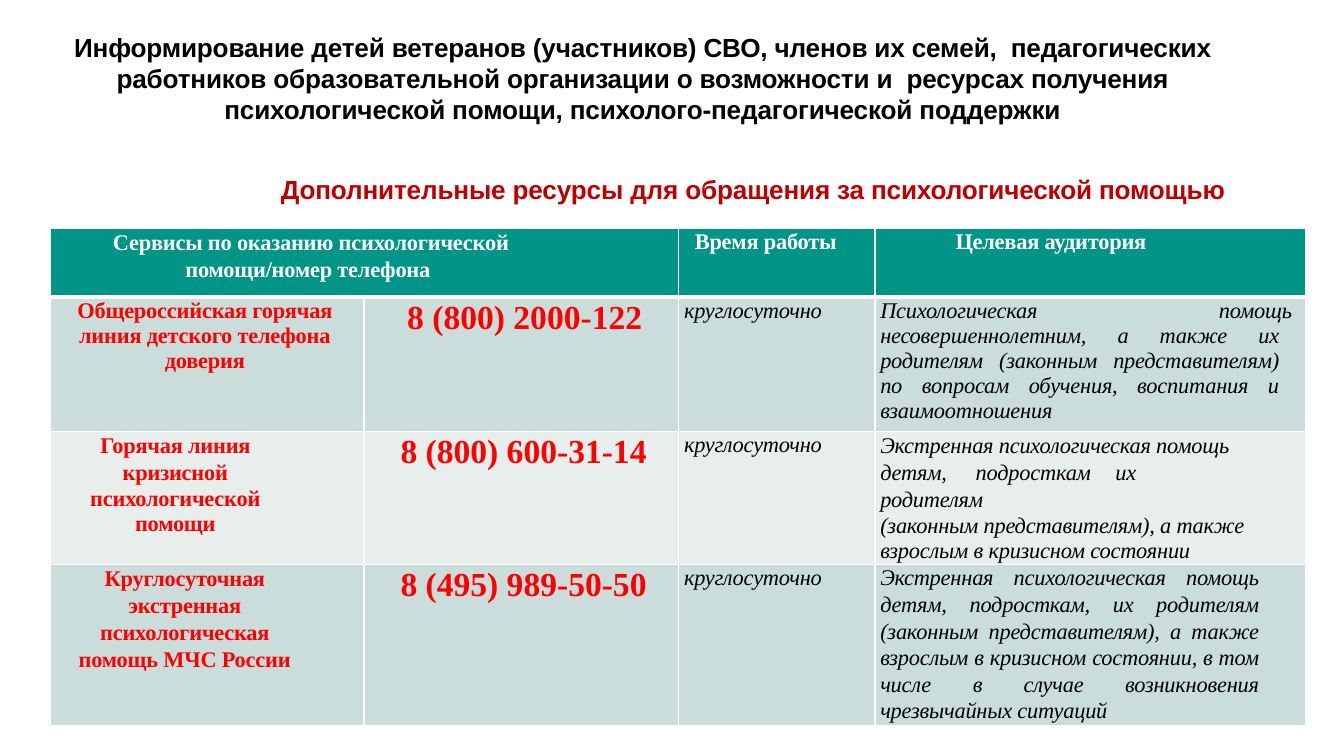
from dataclasses import dataclass

from lxml.etree import SubElement
from pptx import Presentation
from pptx.dml.color import RGBColor
from pptx.enum.text import MSO_ANCHOR, MSO_AUTO_SIZE, PP_ALIGN
from pptx.oxml.ns import qn
from pptx.util import Inches, Pt

COLORS = {
    "title": "000000", "subtitle": "C00000", "header": "009587",
    "header_text": "FFFFFF", "service": "FF0000", "detail": "000000",
    "band_dark": "CADDDA", "band_light": "E7EEEC", "border": "FFFFFF",
}
LEFT, CENTER, JUSTIFY = PP_ALIGN.LEFT, PP_ALIGN.CENTER, PP_ALIGN.JUSTIFY


@dataclass
class Line:
    """One paragraph: indents and tab stops in inches, leading in points."""
    text: str
    align: PP_ALIGN = LEFT
    left: float = 0
    right: float = 0
    first: float = 0
    leading: float = 14.1
    tabs: tuple = ()


HEADERS = {
    0: Line("Сервисы по оказанию психологической помощи/номер телефона",
            left=1.01, right=1, first=-0.54, leading=14.4),
    2: Line("Время работы", left=0.12),
    3: Line("Целевая аудитория", left=0.6),
}

# service name, phone, phone indent, audience
SERVICES = [
    ([Line("Общероссийская горячая", CENTER, right=0.03),
      Line("линия детского телефона", CENTER, right=0.03, leading=13.4),
      Line("доверия", CENTER, right=0.03, leading=13.4)],
     "8 (800) 2000-122", 0.32,
     [Line("Психологическая\tпомощь", JUSTIFY, 0.04, tabs=(2.52,)),
      Line("несовершеннолетним, а также их родителям (законным представителям) "
           "по вопросам обучения, воспитания и взаимоотношения",
           JUSTIFY, 0.04, 0.2, leading=13.4)]),
    ([Line("Горячая линия кризисной", CENTER, 0.37, 0.84, leading=14.4),
      Line("психологической", CENTER, right=0.47, leading=13.9),
      Line("помощи", CENTER, right=0.47, leading=13.4)],
     "8 (800) 600-31-14", 0.27,
     [Line("Экстренная психологическая помощь детям,\tподросткам\tих\tродителям",
           LEFT, 0.04, 0.45, leading=14.4, tabs=(0.71, 1.75, 2.07)),
      Line("(законным представителям), а также", left=0.04, leading=13.9),
      Line("взрослым в кризисном состоянии", left=0.04, leading=13.4)]),
    ([Line("Круглосуточная экстренная психологическая помощь МЧС России",
           CENTER, 0.2, 0.53, leading=14.4)],
     "8 (495) 989-50-50", 0.27,
     [Line("Экстренная психологическая помощь детям, подросткам, их родителям "
           "(законным представителям), а также взрослым в кризисном состоянии, "
           "в том числе в случае возникновения чрезвычайных ситуаций",
           JUSTIFY, 0.04, 0.35, leading=14.2)]),
]


def style_run(run, font, size, color, bold=False, italic=False):
    run.font.name = font
    run.font.size = Pt(size)
    run.font.bold = bold
    run.font.italic = italic
    run.font.color.rgb = RGBColor.from_string(COLORS[color])
    if size < 18:
        run._r.get_or_add_rPr().set("spc", "-10")


def write_heading(shape, box, text, color, align):
    shape.left, shape.top, shape.width, shape.height = map(Inches, box)
    frame = shape.text_frame
    frame.word_wrap = True
    frame.auto_size = MSO_AUTO_SIZE.NONE
    frame.vertical_anchor = MSO_ANCHOR.TOP
    frame.margin_left = frame.margin_right = frame.margin_bottom = 0
    frame.margin_top = Inches(0.01)
    paragraph = frame.paragraphs[0]
    paragraph.alignment = align
    paragraph.line_spacing = 1.0
    run = paragraph.add_run()
    run.text = text
    style_run(run, "Arial", 14, color, bold=True)


def write_cell(cell, lines, size, color, bold=False, italic=False):
    cell.margin_left = cell.margin_right = cell.margin_top = cell.margin_bottom = 0
    frame = cell.text_frame
    for index, line in enumerate(lines):
        paragraph = frame.add_paragraph() if index else frame.paragraphs[0]
        paragraph.alignment = line.align
        paragraph.line_spacing = Pt(line.leading)
        props = paragraph._p.get_or_add_pPr()
        for name, value in (("marL", line.left), ("marR", line.right), ("indent", line.first)):
            if value:
                props.set(name, str(Inches(value)))
        if line.tabs:
            stops = SubElement(props, qn("a:tabLst"))
            for position in line.tabs:
                SubElement(stops, qn("a:tab"), pos=str(Inches(position)), algn="l")
        run = paragraph.add_run()
        run.text = line.text
        style_run(run, "Times New Roman", size, color, bold, italic)


def paint_cell(cell, fill, top, bottom):
    """Fill a cell and draw its borders; top and bottom are widths in points."""
    props = cell._tc.get_or_add_tcPr()
    for side, width in (("L", 1), ("R", 1), ("T", top), ("B", bottom)):
        border = SubElement(props, qn(f"a:ln{side}"), w=str(Pt(width)))
        solid = SubElement(border, qn("a:solidFill"))
        SubElement(solid, qn("a:srgbClr"), val=COLORS["border"])
    cell.fill.solid()
    cell.fill.fore_color.rgb = RGBColor.from_string(COLORS[fill])


def add_services_table(slide, box):
    columns, rows = (2.34, 2.34, 1.46, 3.21), (0.51, 1, 0.99, 1.2)
    table = slide.shapes.add_table(len(rows), len(columns), *map(Inches, box)).table
    for column, width in zip(table.columns, columns):
        column.width = Inches(width)
    for row, height in zip(table.rows, rows):
        row.height = Inches(height)

    for r in range(len(rows)):
        fill = "header" if r == 0 else "band_dark" if r % 2 else "band_light"
        for c in range(len(columns)):
            paint_cell(table.cell(r, c), fill, 3 if r == 1 else 1, 3 if r == 0 else 1)

    table.cell(0, 0).merge(table.cell(0, 1))
    for c, header in HEADERS.items():
        write_cell(table.cell(0, c), [header], 12, "header_text", bold=True)
    for r, (service, phone, indent, audience) in enumerate(SERVICES, 1):
        write_cell(table.cell(r, 0), service, 12, "service", bold=True)
        write_cell(table.cell(r, 1), [Line(phone, left=indent, leading=21.1)],
                   18, "service", bold=True)
        write_cell(table.cell(r, 2), [Line("круглосуточно", left=0.04)],
                   12, "detail", italic=True)
        write_cell(table.cell(r, 3), audience, 12, "detail", italic=True)


def main():
    deck = Presentation()
    deck.slide_width, deck.slide_height = Inches(10), Inches(10 * 9 / 16)
    slide = deck.slides.add_slide(deck.slide_layouts[5])
    write_heading(
        slide.shapes.title, (0.37, 0.22, 8.82, 0.96),
        "Информирование детей ветеранов (участников) СВО, членов их семей,  "
        "педагогических работников образовательной организации о возможности и  "
        "ресурсах получения психологической помощи, "
        "психолого-педагогической поддержки",
        "title", CENTER)
    subtitle_box = (2.09, 1.28, 7.7, 0.25)
    write_heading(
        slide.shapes.add_textbox(*map(Inches, subtitle_box)), subtitle_box,
        "Дополнительные ресурсы для обращения за психологической помощью",
        "subtitle", LEFT)
    add_services_table(slide, (0.37, 1.7, 9.35, 3.7))
    deck.save("out.pptx")


if __name__ == "__main__":
    main()
